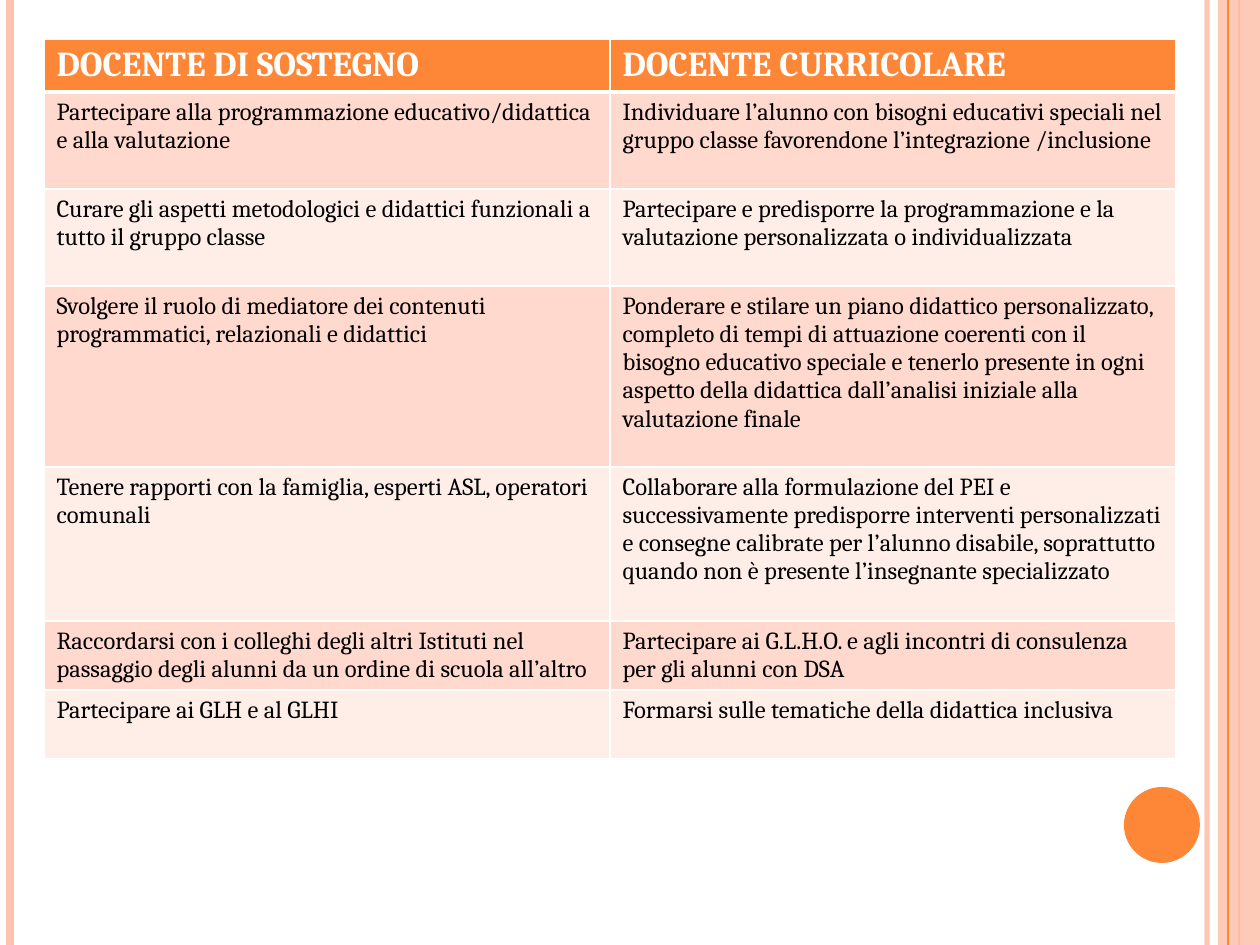
from dataclasses import dataclass

from lxml import etree
from pptx import Presentation, util as u
from pptx.dml.color import RGBColor
from pptx.enum import shapes as kinds
from pptx.oxml import ns


@dataclass(frozen=True)
class Theme:
    font: str = "Cambria"
    head: int = 20
    body: int = 14
    white: str = "FFFFFF"
    black: str = "000000"
    main: str = "FE8637"
    soft: str = "FEC3AE"
    bands: tuple[str, str] = ("FFD9CE", "FFEDE8")


@dataclass(frozen=True)
class Rule:
    x: int
    color: str
    width: float
    alpha: int = 100


@dataclass(frozen=True)
class Block:
    kind: kinds.MSO_SHAPE
    x: int
    y: int
    w: int
    h: int
    color: str
    alpha: int = 100


@dataclass(frozen=True)
class Row:
    height: int
    left: str
    right: str


T = Theme()
WIDE, HIGH = 1260, 945
LEFT, TOP, COL = 44, 39, 566

BACK = (
    Rule(1207, T.soft, 3, 93),
    Rule(10, T.soft, 4.5),
    Rule(1239, T.main, 1.5),
    Block(kinds.MSO_SHAPE.RECTANGLE, 1218, 0, 42, HIGH, T.soft, 87),
    Rule(1228, T.main, 0.75),
    Block(kinds.MSO_SHAPE.OVAL, 1124, 787, 76, 76, T.main),
)

ROWS = (
    Row(52, "DOCENTE DI SOSTEGNO", "DOCENTE CURRICOLARE"),
    Row(97, "Partecipare alla programmazione educativo/didattica e alla valutazione",
        "Individuare l’alunno con bisogni educativi speciali nel gruppo classe "
        "favorendone l’integrazione /inclusione"),
    Row(97, "Curare gli aspetti metodologici e didattici funzionali a tutto il gruppo classe",
        "Partecipare e predisporre la programmazione e la valutazione "
        "personalizzata o individualizzata"),
    Row(181, "Svolgere il ruolo di mediatore dei contenuti programmatici, "
        "relazionali e didattici",
        "Ponderare e stilare un piano didattico personalizzato, completo di tempi "
        "di attuazione coerenti con il bisogno educativo speciale e tenerlo presente "
        "in ogni aspetto della didattica dall’analisi iniziale alla valutazione finale"),
    Row(154, "Tenere rapporti con la famiglia, esperti ASL, operatori comunali",
        "Collaborare alla formulazione del PEI e successivamente predisporre "
        "interventi personalizzati e consegne calibrate per l’alunno disabile, "
        "soprattutto quando non è presente l’insegnante specializzato"),
    Row(69, "Raccordarsi con i colleghi degli altri Istituti nel passaggio degli alunni "
        "da un ordine di scuola all’altro",
        "Partecipare ai G.L.H.O. e agli incontri di consulenza per gli alunni con DSA"),
    Row(69, "Partecipare ai GLH e al GLHI",
        "Formarsi sulle tematiche della didattica inclusiva"),
)


def px(n: int) -> u.Emu:
    return u.Emu(round(n * 914400 / 126))


def rgb(code: str) -> RGBColor:
    return RGBColor.from_string(code)


def fade(props, alpha: int) -> None:
    if alpha < 100:
        color = next(props.iter(ns.qn("a:srgbClr")))
        etree.SubElement(color, ns.qn("a:alpha"), val=str(alpha * 1000))


def write(frame, words: str, *, size: int, color: str, bold: bool = False) -> None:
    run = frame.paragraphs[0].add_run()
    run.text = words
    run.font.name = T.font
    run.font.size = u.Pt(size)
    run.font.bold = bold
    run.font.color.rgb = rgb(color)


def draw_rule(slide, rule: Rule) -> None:
    line = slide.shapes.add_connector(
        kinds.MSO_CONNECTOR.STRAIGHT, px(rule.x), 0, px(rule.x), px(HIGH))
    line.line.color.rgb = rgb(rule.color)
    line.line.width = u.Pt(rule.width)
    props = line.element.spPr
    fade(props, rule.alpha)
    etree.SubElement(props, ns.qn("a:effectLst"))


def draw_block(slide, block: Block) -> None:
    shape = slide.shapes.add_shape(
        block.kind, px(block.x), px(block.y), px(block.w), px(block.h))
    shape.shadow.inherit = False
    shape.fill.solid()
    shape.fill.fore_color.rgb = rgb(block.color)
    shape.line.fill.background()
    fade(shape.element.spPr, block.alpha)


def edge(cell, side: str, width: int) -> None:
    props = cell._tc.get_or_add_tcPr()
    line = etree.SubElement(props, ns.qn(f"a:ln{side}"), w=str(u.Pt(width)))
    fill = etree.SubElement(line, ns.qn("a:solidFill"))
    etree.SubElement(fill, ns.qn("a:srgbClr"), val=T.white)


def draw_cell(cell, words: str, row: int) -> None:
    thick = {0: "B", 1: "T"}.get(row)
    for side in "LRTB":
        edge(cell, side, 3 if side == thick else 1)
    cell.fill.solid()
    if row == 0:
        cell.fill.fore_color.rgb = rgb(T.main)
        write(cell.text_frame, words, size=T.head, color=T.white, bold=True)
    else:
        cell.fill.fore_color.rgb = rgb(T.bands[(row - 1) % 2])
        write(cell.text_frame, words, size=T.body, color=T.black)


def draw_table(slide, rows: tuple[Row, ...]) -> None:
    total = sum(row.height for row in rows)
    table = slide.shapes.add_table(
        len(rows), 2, px(LEFT), px(TOP), px(2 * COL), px(total)).table
    for col in table.columns:
        col.width = px(COL)
    for i, row in enumerate(rows):
        table.rows[i].height = px(row.height)
        for j, words in enumerate((row.left, row.right)):
            draw_cell(table.cell(i, j), words, i)


def main() -> None:
    deck = Presentation()
    deck.slide_width, deck.slide_height = px(WIDE), px(HIGH)
    slide = deck.slides.add_slide(deck.slide_layouts[6])
    for item in BACK:
        if isinstance(item, Rule):
            draw_rule(slide, item)
        else:
            draw_block(slide, item)
    draw_table(slide, ROWS)
    deck.save("out.pptx")


if __name__ == "__main__":
    main()
